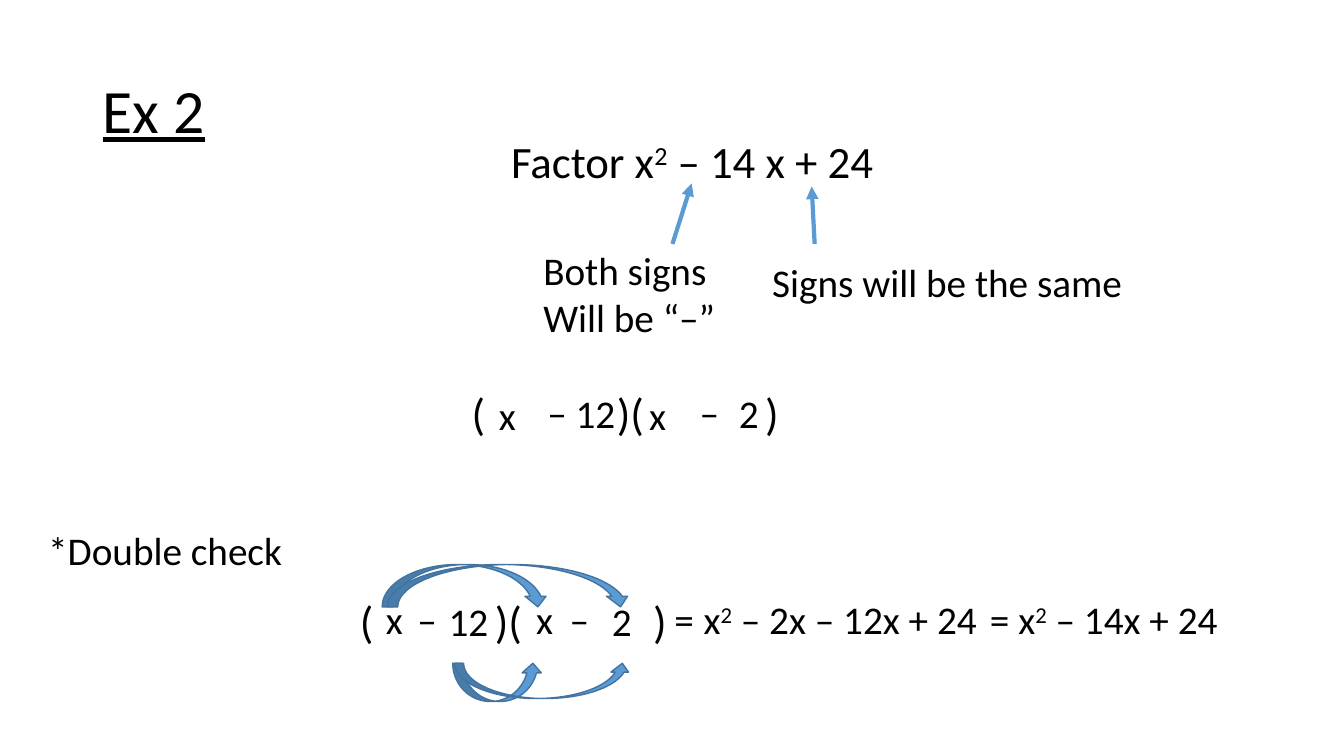
import pptx
import pptx.util
import pptx.dml.color
import pptx.enum.shapes
import pptx.enum.text
import pptx.oxml.ns
import lxml.etree

PX = 9144  # one hundredth of an inch
COLORS = {"ink": "000000", "blue": "5B9BD5", "edge": "43739E"}
RGB = {name: pptx.dml.color.RGBColor.from_string(code) for name, code in COLORS.items()}
KINDS = pptx.enum.shapes.MSO_SHAPE
qn = pptx.oxml.ns.qn

deck = pptx.Presentation()
deck.slide_width = 1333 * PX
deck.slide_height = 750 * PX
slide = deck.slides.add_slide(deck.slide_layouts[6])
shapes = slide.shapes


def add_text(text, left, top, width, height, size=28, tabs=()):
    """Add a text box; each ^ raises the character after it, tabs are offsets in px."""
    box = shapes.add_textbox(left * PX, top * PX, width * PX, height * PX)
    frame = box.text_frame
    frame.word_wrap = True
    for i, row in enumerate(text.split("\n")):
        para = frame.paragraphs[0] if i == 0 else frame.add_paragraph()
        para.font.name = "Calibri"
        para.font.size = pptx.util.Pt(size)
        para.font.color.rgb = RGB["ink"]
        base, *powers = row.split("^")
        para.add_run().text = base
        for part in powers:
            power = para.add_run()
            power.text = part[0]
            power.font._element.set("baseline", "30000")
            para.add_run().text = part[1:]
        if tabs:
            stops = lxml.etree.Element(qn("a:tabLst"))
            for tab in tabs:
                lxml.etree.SubElement(stops, qn("a:tab"), pos=str(tab * PX), algn="l")
            para._p.get_or_add_pPr().insert(0, stops)
    return frame


# Title and problem
title = add_text("Ex 2", 92, 40, 1150, 145, 44)
title.vertical_anchor = pptx.enum.text.MSO_ANCHOR.MIDDLE
title.paragraphs[0].line_spacing = 0.9
title.paragraphs[0].font.underline = True
add_text("Factor x^2 – 14 x + 24", 497, 128, 385, 64, 32)

# Arrows from the notes to the signs
for x1, y1, x2, y2 in [(808, 242, 805, 185), (667, 242, 686, 182)]:
    arrow = shapes.add_connector(
        pptx.enum.shapes.MSO_CONNECTOR.STRAIGHT, x1 * PX, y1 * PX, x2 * PX, y2 * PX)
    arrow.line.color.rgb = RGB["blue"]
    arrow.line.width = pptx.util.Pt(3)
    lxml.etree.SubElement(arrow.line._get_or_add_ln(), qn("a:tailEnd"), type="triangle")
    lxml.etree.SubElement(arrow._element.spPr, qn("a:effectLst"))

add_text("Signs will be the same", 756, 251, 371, 57)
add_text("Both signs\nWill be “–”", 529, 239, 201, 104)
add_text("*Double check", 38, 517, 255, 57)

# Factored form: brackets, signs, variables and numbers are spaced by tabs
factors = [
    ((458, 378), 144, (533, 380), (485, 383), (561, 381)),
    ((347, 584), 134, (404, 586), (373, 586), (435, 588)),
]
for brackets, middle, signs, names, numbers in factors:
    add_text("(\t)(\t)", *brackets, 339, 64, 32, (middle, 291))
    add_text("–\t–", *signs, 212, 57, tabs=(151,))
    add_text("x\tx", *names, 188, 57, tabs=(149,))
    add_text("12\t2", *numbers, 205, 57, tabs=(162,))

# Curved arrows pair up the terms
curves = [
    (KINDS.CURVED_DOWN_ARROW, 379, 560, 165, 42),
    (KINDS.CURVED_DOWN_ARROW, 384, 560, 242, 42),
    (KINDS.CURVED_UP_ARROW, 449, 658, 89, 38),
    (KINDS.CURVED_UP_ARROW, 451, 658, 175, 35),
]
for kind, left, top, width, height in curves:
    curve = shapes.add_shape(kind, left * PX, top * PX, width * PX, height * PX)
    curve.shadow.inherit = False
    curve.fill.solid()
    curve.fill.fore_color.rgb = RGB["blue"]
    curve.line.color.rgb = RGB["edge"]
    curve.line.width = pptx.util.Pt(1)

# Expanded form
for text, left, width in [
    ("=", 659, 49),
    ("x^2 – 2x – 12x + 24", 688, 297),
    ("= x^2 – 14x + 24", 972, 251),
]:
    add_text(text, left, 586, width, 57)

deck.save("out.pptx")
